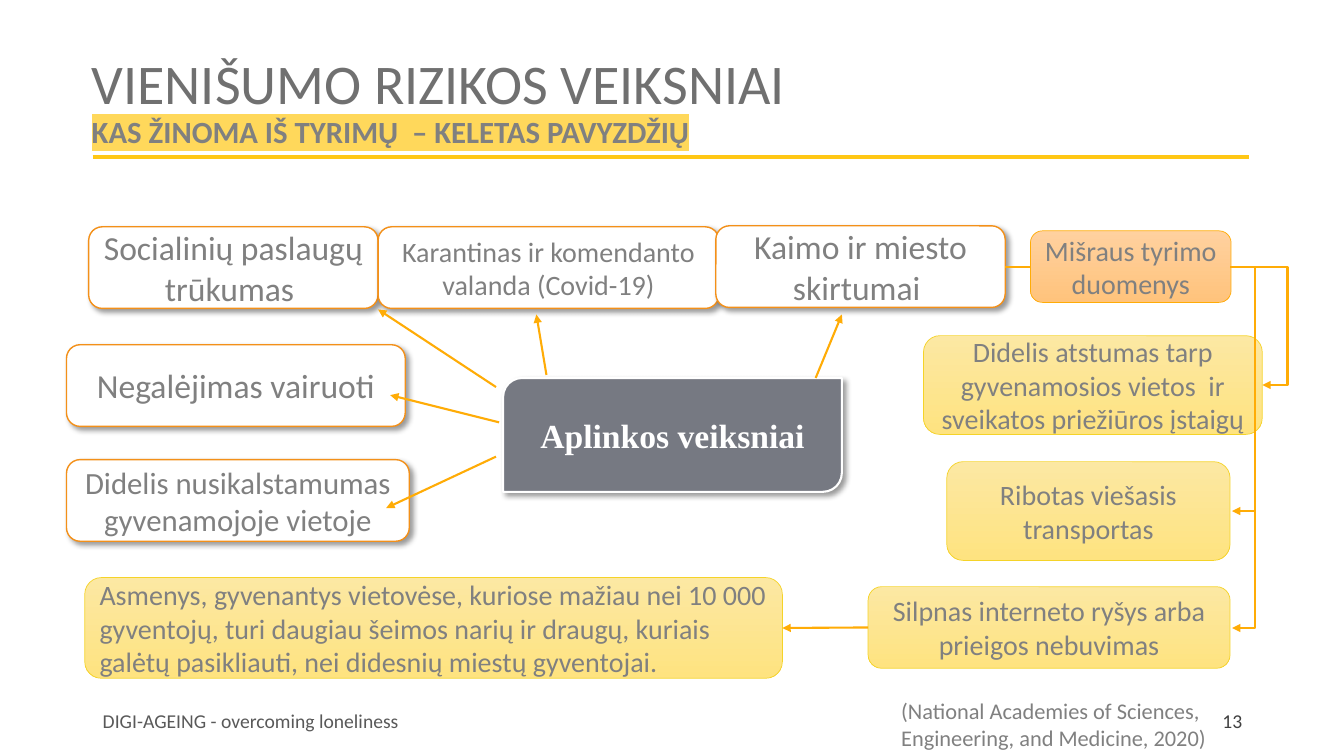
from lxml import etree
from pptx import Presentation
from pptx.dml.color import RGBColor
from pptx.enum import shapes, text
from pptx.oxml import parse_xml
from pptx.oxml.ns import nsdecls, qn
from pptx.util import Inches, Pt

WHITE = RGBColor(0xFF, 0xFF, 0xFF)
GREY = RGBColor(0x80, 0x80, 0x80)
TITLE_GREY = RGBColor(0x70, 0x70, 0x70)
FOOTER_GREY = RGBColor(0x59, 0x59, 0x59)
NUMBER_GREY = RGBColor(0x40, 0x40, 0x40)
SLATE = RGBColor(0x76, 0x79, 0x82)
RULE_YELLOW = RGBColor(0xFF, 0xC7, 0x15)
AMBER = RGBColor(0xFF, 0xAC, 0x06)
ORANGE = RGBColor(0xF3, 0x90, 0x19)
YELLOW_EDGE = RGBColor(0xF5, 0xD3, 0x28)
YELLOW_FADE = (RGBColor(0xFC, 0xE8, 0xA3), RGBColor(0xFE, 0xE3, 0x80))
ORANGE_FADE = (RGBColor(0xFF, 0xD1, 0x9F), RGBColor(0xFF, 0xC3, 0x7C))
HIGHLIGHT = RGBColor(0xFF, 0xD8, 0x5B)

CENTER, LEFT, RIGHT = text.PP_ALIGN.CENTER, text.PP_ALIGN.LEFT, text.PP_ALIGN.RIGHT
ROUND = shapes.MSO_SHAPE.ROUNDED_RECTANGLE
DIAGONAL = shapes.MSO_SHAPE.ROUND_2_DIAG_RECTANGLE
STRAIGHT, ELBOW = shapes.MSO_CONNECTOR.STRAIGHT, shapes.MSO_CONNECTOR.ELBOW

prs = Presentation()
prs.slide_width, prs.slide_height = Inches(13.33), Inches(7.5)
slide = prs.slides.add_slide(prs.slide_layouts[5])


def write(shape, words, size, color, align, font="Calibri", bold=False):
    frame = shape.text_frame
    frame.text = words
    frame.word_wrap = True
    frame.vertical_anchor = text.MSO_ANCHOR.MIDDLE
    for paragraph in frame.paragraphs:
        paragraph.alignment = align
        for run in paragraph.runs:
            run.font.size, run.font.name, run.font.bold = Pt(size), font, bold
            run.font.color.rgb = color


def connect(kind, start, end, color=AMBER, width=1.5, arrow=True):
    line = slide.shapes.add_connector(kind, *map(Inches, start + end))
    line.line.color.rgb, line.line.width = color, Pt(width)
    if arrow:
        etree.SubElement(line.line._get_or_add_ln(), qn("a:tailEnd"), type="triangle")
    etree.SubElement(line._element.spPr, qn("a:effectLst"))
    return line


connect(STRAIGHT, (0.92, 1.56), (12.39, 1.56), RULE_YELLOW, 3, False)

title = slide.shapes.title
title.left, title.top, title.width, title.height = map(Inches, (0.81, 0.47, 11.85, 1.1))
write(title, "VIENIŠUMO RIZIKOS VEIKSNIAI\vKAS ŽINOMA IŠ TYRIMŲ  – KELETAS PAVYZDŽIŲ", 40, TITLE_GREY, LEFT)
title.text_frame.auto_size = text.MSO_AUTO_SIZE.NONE
title.text_frame.paragraphs[0].line_spacing = 0.9
subtitle = title.text_frame.paragraphs[0].runs[1]
subtitle.font.size, subtitle.font.bold = Pt(22), True
subtitle.font.color.rgb = GREY
subtitle._r.rPr.find(qn("a:solidFill")).addnext(parse_xml(
    f'<a:highlight {nsdecls("a")}><a:srgbClr val="{HIGHLIGHT}"/></a:highlight>'))

captions = [
    ((0.92, 6.95, 7.45, 0.39), "DIGI-AGEING - overcoming loneliness", 14, FOOTER_GREY, LEFT),
    ((9.42, 6.95, 3, 0.4), "13", 14, NUMBER_GREY, RIGHT),
    ((8.84, 6.86, 3.36, 0.64),
     "(National Academies of Sciences,\nEngineering, and Medicine, 2020)", 16, GREY, LEFT),
]
for place, words, size, color, align in captions:
    write(slide.shapes.add_textbox(*map(Inches, place)), words, size, color, align)

factors = [
    ("centre", (4.99, 3.75, 3.36, 1.13), "Aplinkos veiksniai", 24),
    ("driving", (0.66, 3.42, 3.36, 0.81), "Negalėjimas vairuoti", 24),
    ("crime", (0.66, 4.56, 3.4, 0.81), "Didelis nusikalstamumas gyvenamojoje vietoje", 22),
    ("services", (0.88, 2.25, 2.87, 0.81), "Socialinių paslaugų trūkumas ", 24),
    ("quarantine", (3.75, 2.25, 3.38, 0.81), "Karantinas ir komendanto valanda (Covid-19)", 20),
    ("rural", (7.1, 2.24, 2.87, 0.81), "Kaimo ir miesto skirtumai ", 24),
]
boxes = {}
for key, place, words, size in factors:
    central = key == "centre"
    box = slide.shapes.add_shape(DIAGONAL if central else ROUND, *map(Inches, place))
    box.fill.solid()
    box.fill.fore_color.rgb = SLATE if central else WHITE
    box.line.color.rgb = WHITE if central else ORANGE
    box.line.width = Pt(1.5 if central else 1)
    box.shadow.inherit = False
    box._element.spPr.find(qn("a:effectLst")).append(parse_xml(
        f'<a:outerShdw {nsdecls("a")} blurRad="{Pt(4)}" dist="{Pt(3)}" dir="2700000" rotWithShape="0">'
        '<a:srgbClr val="000000"><a:alpha val="40000"/></a:srgbClr></a:outerShdw>'))
    write(box, words, size, WHITE if central else GREY, CENTER,
          "Times New Roman" if central else "Calibri", central)
    boxes[key] = box

findings = [
    ("distance", (9.16, 3.33, 3.36, 0.98),
     "Didelis atstumas tarp gyvenamosios vietos  ir sveikatos priežiūros įstaigų", CENTER),
    ("transport", (9.39, 4.58, 2.81, 0.98), "Ribotas viešasis transportas", CENTER),
    ("internet", (8.61, 5.82, 3.59, 0.81), "Silpnas interneto ryšys arba prieigos nebuvimas", CENTER),
    ("residents", (0.84, 5.73, 6.92, 1),
     "Asmenys, gyvenantys vietovėse, kuriose mažiau nei 10 000 gyventojų, turi daugiau šeimos narių "
     "ir draugų, kuriais galėtų pasikliauti, nei didesnių miestų gyventojai.", LEFT),
    ("study", (10.22, 2.29, 1.99, 0.71), "Mišraus tyrimo duomenys", CENTER),
]
for key, place, words, align in findings:
    box = slide.shapes.add_shape(ROUND, *map(Inches, place))
    box.fill.gradient()
    box.fill.gradient_angle = 270
    for stop, color in zip(box.fill.gradient_stops, ORANGE_FADE if key == "study" else YELLOW_FADE):
        stop.color.rgb = color
    box.line.color.rgb = AMBER if key == "study" else YELLOW_EDGE
    box.line.width = Pt(0.5)
    box.shadow.inherit = False
    write(box, words, 20, GREY, align)
    boxes[key] = box

for start, end in [
    ((4.92, 3.84), (3.75, 3.07)),
    ((4.95, 4.19), (3.87, 3.92)),
    ((4.92, 4.53), (3.83, 5.04)),
    ((5.42, 3.72), (5.32, 3.12)),
    ((8.09, 3.75), (8.35, 3.12)),
]:
    connect(STRAIGHT, start, end)

for origin, target, start, end, arrow in [
    ("rural", "study", (9.97, 2.65), (10.22, 2.65), False),
    ("internet", "residents", (8.61, 6.23), (7.76, 6.23), True),
]:
    link = connect(STRAIGHT, start, end, arrow=arrow)
    link.begin_connect(boxes[origin], 3 if origin == "rural" else 1)
    link.end_connect(boxes[target], 1 if target == "study" else 3)

for end, bend in [((12.52, 3.82), 12.77), ((12.22, 5.07), 12.45), ((12.22, 6.23), 12.45)]:
    start = (12.2, 2.65)
    branch = connect(ELBOW, start, end)
    ratio = (bend - start[0]) / (end[0] - start[0])
    guides = branch._element.spPr.find(qn("a:prstGeom")).get_or_add_avLst()
    etree.SubElement(guides, qn("a:gd"), name="adj1", fmla=f"val {round(ratio * 100000)}")

prs.save("out.pptx")
